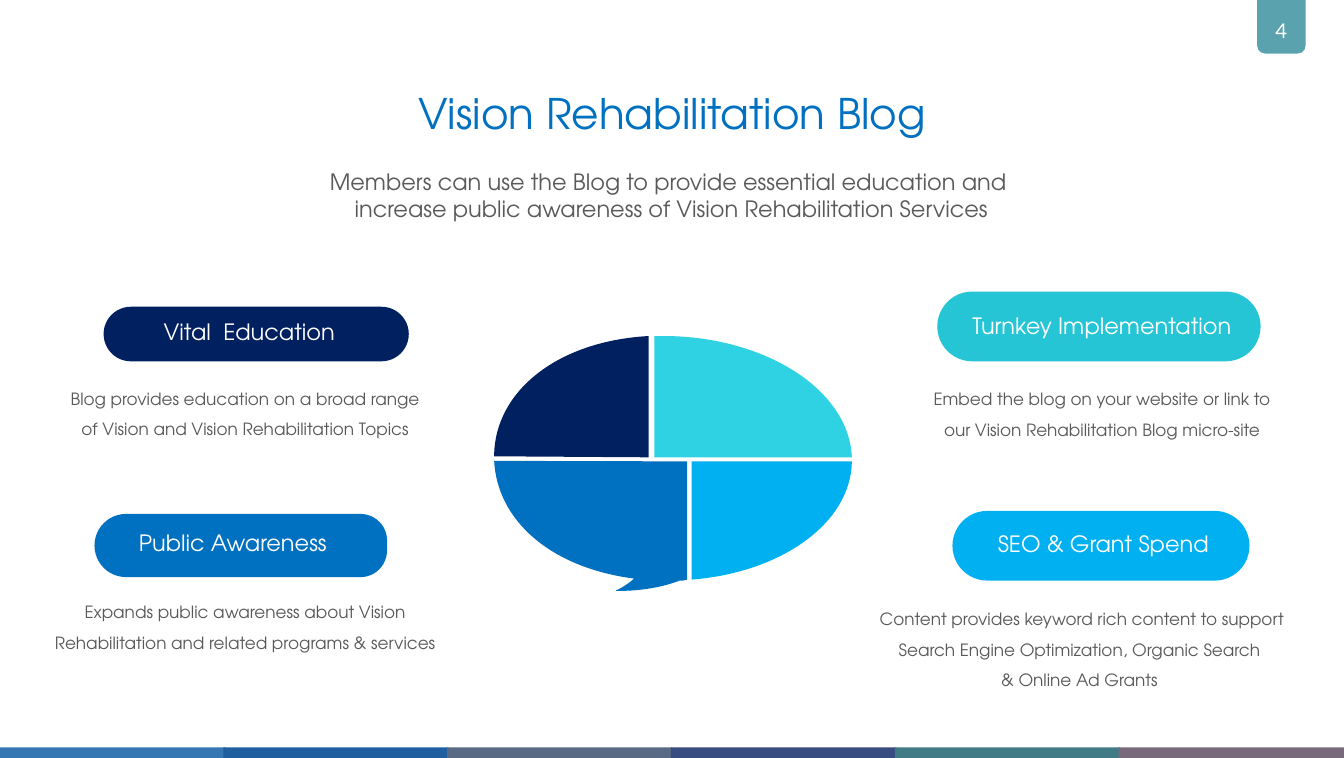
from dataclasses import dataclass
from pptx import Presentation, util as u
from pptx.dml.color import RGBColor
from pptx.enum import shapes, text
from pptx.oxml.xmlchemy import OxmlElement

PX = u.Inches(1) // 100
WIDE, HIGH = 2660, 1500
MID = text.PP_ALIGN.CENTER


@dataclass(frozen=True)
class Theme:
    font: str = "TeX Gyre Adventor"
    num_font: str = "Lato"
    white: str = "FFFFFF"
    gray: str = "595959"
    navy: str = "002060"
    blue: str = "0070C0"
    sky: str = "00B0F0"
    aqua: str = "2FD2E3"
    teal: str = "26C5D6"
    tab: str = "5AA2AE"
    strip: tuple = ("3477B2", "1F5FA0", "596A85", "384C81", "417B85", "78697B")
    title: int = 60
    label: int = 32
    note: int = 24
    num: int = 29


T = Theme()

PILLS = [
    ((414, 790, 125, 579), 0.42, T.blue),
    ((453, 359, 108, 604), 0.5, T.navy),
    ((2106, 326, 138, 640), 0.5, T.teal),
    ((2110, 786, 138, 588), 0.5, T.sky),
]
LABELS = [
    ("Vital  Education", (188, 630, 611, 54), (0, 0), MID),
    ("Turnkey Implementation", (1892, 617, 578, 54), (0, 0), MID),
    ("Public Awareness", (265, 1042, 405, 64), (10, 5), text.PP_ALIGN.LEFT),
    ("SEO & Grant Spend", (1965, 1044, 490, 64), (10, 5), text.PP_ALIGN.LEFT),
]
NOTES = [
    ("Blog provides education on a broad range of Vision and "
     "Vision Rehabilitation Topics", (110, 737, 750, 138)),
    ("Embed the blog on your website or link to our "
     "Vision Rehabilitation Blog micro-site", (1798, 738, 766, 138)),
    ("Expands public awareness about Vision Rehabilitation and "
     "related programs & services", (71, 1159, 828, 138)),
    ("Content provides keyword rich content to support Search Engine "
     "Optimization, Organic Search \n& Online Ad Grants ",
     (1663, 1173, 956, 246)),
]
BUBBLE = [
    (T.aqua, (1295, 905), [
        [(1686, 905)],
        [(1681, 775), (1522, 669), (1323, 665)],
        [(1314, 665), (1304, 665), (1295, 665)]]),
    (T.sky, (1369, 913), [
        [(1369, 1147)],
        [(1546, 1133), (1683, 1036), (1686, 915)],
        [(1686, 913)]]),
    (T.navy, (1284, 905), [
        [(1284, 665)],
        [(1103, 675), (981, 774), (978, 899)],
        [(978, 901), (978, 902), (978, 903)]]),
    (T.blue, (1360, 913), [
        [(978, 912)],
        [(984, 1028), (1087, 1123), (1255, 1145)],
        [(1246, 1153), (1232, 1163), (1218, 1169)],
        [(1218, 1169), (1282, 1173), (1345, 1149)],
        [(1350, 1149), (1356, 1149), (1360, 1147)]]),
]


def emu(box):
    return [n * PX for n in box]


def apply(obj, values):
    for key, val in values.items():
        setattr(obj, key, val)


def paint(shape, color):
    shape.shadow.inherit = False
    shape.fill.solid()
    shape.fill.fore_color.rgb = RGBColor.from_string(color)
    shape.line.fill.background()
    return shape


def block(slide, kind, box, color):
    return paint(slide.shapes.add_shape(kind, *emu(box)), color)


def write(shape, lines, size, color, inset, face=T.font, align=MID,
          lead=1.0, anchor=text.MSO_ANCHOR.TOP):
    frame = shape.text_frame
    x, y = emu(inset)
    apply(frame, dict(word_wrap=True, auto_size=text.MSO_AUTO_SIZE.NONE,
                      vertical_anchor=anchor, margin_left=x, margin_right=x,
                      margin_top=y, margin_bottom=y))
    for i, line in enumerate(lines):
        para = frame.add_paragraph() if i else frame.paragraphs[0]
        para.text = line
        apply(para, dict(alignment=align, line_spacing=lead,
                         space_before=u.Pt(0)))
        for run in para.runs:
            apply(run.font, dict(name=face, size=u.Pt(size)))
            run.font.color.rgb = RGBColor.from_string(color)


def label(slide, words, box, *args, **style):
    write(slide.shapes.add_textbox(*emu(box)), [words], *args, **style)


def holder(shape, box, *args, **style):
    apply(shape, dict(zip(("left", "top", "width", "height"), emu(box))))
    write(shape, *args, **style)


def plain(shape):
    for para in shape.text_frame.paragraphs:
        props = para._p.get_or_add_pPr()
        props.set("marL", "0")
        props.set("indent", "0")
        props.append(OxmlElement("a:buNone"))


def pill(slide, box, right, color):
    kind = shapes.MSO_SHAPE.ROUND_2_SAME_RECTANGLE
    shape = block(slide, kind, box, color)
    shape.rotation = 90
    shape.adjustments[0] = right
    shape.adjustments[1] = 0.5


def bend(legs):
    curve = OxmlElement("a:cubicBezTo")
    legs[0].addprevious(curve)
    for leg in legs:
        curve.append(leg[0])
        leg.getparent().remove(leg)


def wedge(slide, color, start, parts):
    draft = slide.shapes.build_freeform(*emu(start), scale=1.0)
    draft.add_line_segments([emu(dot) for part in parts for dot in part],
                            close=True)
    shape = paint(draft.convert_to_shape(), color)
    legs = iter(shape._element.xpath(".//a:lnTo"))
    for part in parts:
        group = [next(legs) for _ in part]
        if len(group) == 3:
            bend(group)


def frame(slide):
    count = len(T.strip)
    for i, color in enumerate(T.strip):
        left = i * 2214 // (count - 1)
        block(slide, shapes.MSO_SHAPE.RECTANGLE, (left, 1479, 446, 26), color)
    tab = block(slide, shapes.MSO_SHAPE.ROUND_2_SAME_RECTANGLE,
                (2488, 0, 96, 106), T.tab)
    tab.rotation = 180
    label(slide, "4", (2500, 25, 72, 69), T.num, T.white, (20, 10),
          face=T.num_font)


def main():
    deck = Presentation()
    apply(deck, dict(slide_width=WIDE * PX, slide_height=HIGH * PX))
    slide = deck.slides.add_slide(deck.slide_layouts[1])
    head, body = slide.placeholders
    holder(head, (0, 167, WIDE, 111), ["Vision Rehabilitation Blog"],
           T.title, T.blue, (10, 5))
    holder(body, (-1, 319, WIDE, 135),
           ["Members can use the Blog to provide essential education and ",
            "increase public awareness of Vision Rehabilitation Services"],
           T.label, T.gray, (27, 13), anchor=text.MSO_ANCHOR.MIDDLE)
    plain(body)
    frame(slide)
    for item in PILLS:
        pill(slide, *item)
    for item in BUBBLE:
        wedge(slide, *item)
    for words, box, inset, align in LABELS:
        label(slide, words, box, T.label, T.white, inset, align=align)
    for words, box in NOTES:
        label(slide, words, box, T.note, T.gray, (24, 12), lead=1.5)
    deck.save("out.pptx")


if __name__ == "__main__":
    main()
